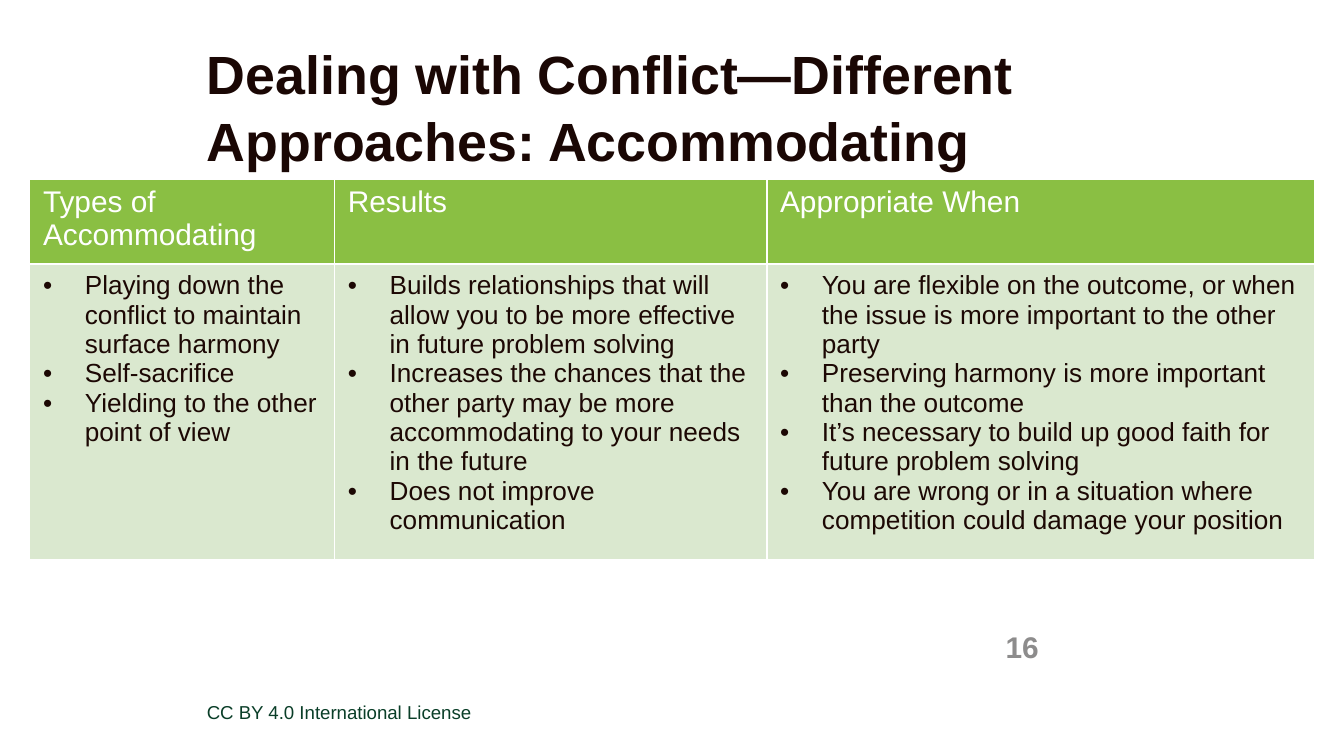
import pptx
import pptx.util
import pptx.dml.color
import pptx.enum.text
import pptx.oxml.ns
from lxml import etree
from pptx.util import Cm

TITLE = "Dealing with Conflict—Different Approaches: Accommodating"
LICENSE = "CC BY 4.0 International License"
PAGE_NUMBER = "16"
COLUMNS = [
    ("Types of Accommodating", 5.76, [
        "Playing down the conflict to maintain surface harmony",
        "Self-sacrifice",
        "Yielding to the other point of view",
    ]),
    ("Results", 8.17, [
        "Builds relationships that will allow you to be more effective in future problem solving",
        "Increases the chances that the other party may be more accommodating to your needs in the future",
        "Does not improve communication",
    ]),
    ("Appropriate When", 10.36, [
        "You are flexible on the outcome, or when the issue is more important to the other party",
        "Preserving harmony is more important than the outcome",
        "It’s necessary to build up good faith for future problem solving",
        "You are wrong or in a situation where competition could damage your position",
    ]),
]
ROW_HEIGHTS = [1.5, 5.26]
THEME = {
    "font": "Arial",
    "title": (28.8, "1A0704", True),
    "license": (10, "0A3E28", False),
    "page": (16, "8D8C8C", True),
    "header": (16, "FFFFFF", False),
    "body": (14, "1C0804", False),
    "header_fill": "8ABF43",
    "body_fill": "DAE8CF",
    "border": "FFFFFF",
    "border_width": 1,
}


def rgb(color):
    return pptx.dml.color.RGBColor.from_string(color)


def write(frame, lines, role, bulleted=False):
    size, color, bold = THEME[role]
    frame.text = "\n".join(lines)
    frame.word_wrap = True
    for paragraph in frame.paragraphs:
        if bulleted:
            add_bullet(paragraph)
        for run in paragraph.runs:
            run.font.name = THEME["font"]
            run.font.size = pptx.util.Pt(size)
            run.font.bold = bold
            run.font.color.rgb = rgb(color)


def add_bullet(paragraph):
    properties = paragraph._p.get_or_add_pPr()
    properties.set("marL", str(Cm(0.79)))
    properties.set("indent", str(-Cm(0.79)))
    etree.SubElement(properties, pptx.oxml.ns.qn("a:buFont"), typeface=THEME["font"])
    etree.SubElement(properties, pptx.oxml.ns.qn("a:buChar"), char="•")


def paint_cell(cell, fill):
    properties = cell._tc.get_or_add_tcPr()
    for side in ("lnL", "lnR", "lnT", "lnB"):
        border = etree.SubElement(properties, pptx.oxml.ns.qn("a:" + side),
                                  w=str(pptx.util.Pt(THEME["border_width"])))
        solid = etree.SubElement(border, pptx.oxml.ns.qn("a:solidFill"))
        etree.SubElement(solid, pptx.oxml.ns.qn("a:srgbClr"), val=THEME["border"])
    cell.fill.solid()
    cell.fill.fore_color.rgb = rgb(THEME[fill])


def add_text(slide, text, role, left, top, width, height):
    frame = slide.shapes.add_textbox(Cm(left), Cm(top), Cm(width), Cm(height)).text_frame
    frame.margin_left = frame.margin_right = frame.margin_top = frame.margin_bottom = 0
    write(frame, [text], role)
    return frame


def add_approaches(slide):
    total_width = sum(width for _, width, _ in COLUMNS)
    approaches = slide.shapes.add_table(
        len(ROW_HEIGHTS), len(COLUMNS), Cm(0.56), Cm(3.38),
        Cm(total_width), Cm(sum(ROW_HEIGHTS))).table
    for row, height in zip(approaches.rows, ROW_HEIGHTS):
        row.height = Cm(height)
    for index, (heading, width, points) in enumerate(COLUMNS):
        approaches.columns[index].width = Cm(width)
        heading_cell, points_cell = approaches.cell(0, index), approaches.cell(1, index)
        write(heading_cell.text_frame, [heading], "header")
        write(points_cell.text_frame, points, "body", bulleted=True)
        paint_cell(heading_cell, "header_fill")
        paint_cell(points_cell, "body_fill")


def main():
    deck = pptx.Presentation()
    deck.slide_width, deck.slide_height = Cm(25.4), Cm(14.28)
    slide = deck.slides.add_slide(deck.slide_layouts[6])

    title = add_text(slide, TITLE, "title", 3.91, 0.72, 20.22, 2.4)
    title.paragraphs[0].line_spacing = 1.04
    add_text(slide, LICENSE, "license", 3.91, 13.23, 15.21, 0.4)
    page = add_text(slide, PAGE_NUMBER, "page", 18.06, 11.76, 1.57, 0.76)
    page.margin_top = Cm(0.13)
    page.vertical_anchor = pptx.enum.text.MSO_ANCHOR.MIDDLE
    page.paragraphs[0].alignment = pptx.enum.text.PP_ALIGN.RIGHT
    add_approaches(slide)

    deck.save("out.pptx")


if __name__ == "__main__":
    main()
